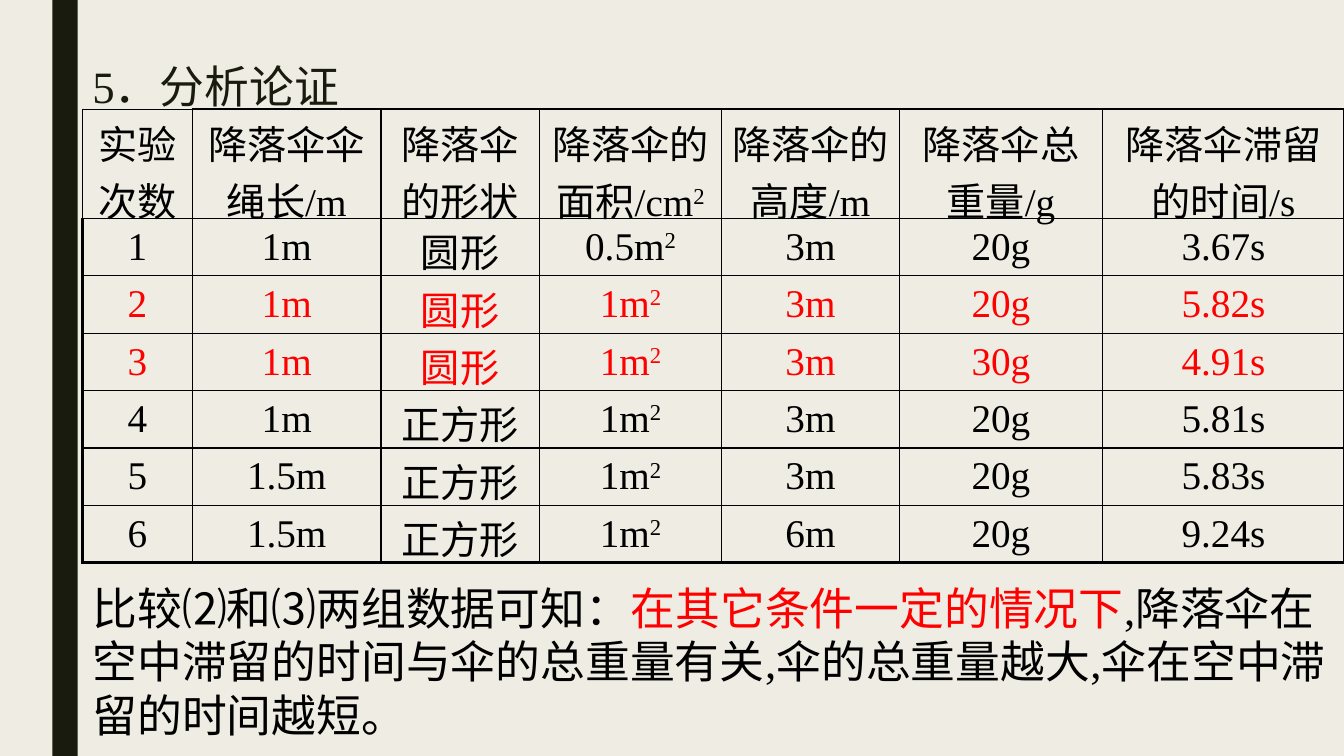
import pptx
import pptx.dml.color
import pptx.enum.shapes
import pptx.enum.text
import pptx.oxml.ns
import pptx.util
from lxml import etree

Cm, Pt = pptx.util.Cm, pptx.util.Pt
COLORS = {"page": "EFEDE3", "bar": "191B0E", "ink": "000000", "key": "FF0000"}
FONT = "Times New Roman"
TITLE = "5．分析论证"
HEADERS = ["实验次数", "降落伞伞绳长/m", "降落伞的形状", "降落伞的面积/cm²",
           "降落伞的高度/m", "降落伞总重量/g", "降落伞滞留的时间/s"]
TRIALS = [
    ("1", "1m", "圆形", "0.5m²", "3m", "20g", "3.67s"),
    ("2", "1m", "圆形", "1m²", "3m", "20g", "5.82s"),
    ("3", "1m", "圆形", "1m²", "3m", "30g", "4.91s"),
    ("4", "1m", "正方形", "1m²", "3m", "20g", "5.81s"),
    ("5", "1.5m", "正方形", "1m²", "3m", "20g", "5.83s"),
    ("6", "1.5m", "正方形", "1m²", "6m", "20g", "9.24s"),
]
COMPARED = ("2", "3")
CONCLUSION = [
    ("比较⑵和⑶两组数据可知：", "ink"),
    ("在其它条件一定的情况下", "key"),
    (",降落伞在空中滞留的时间与伞的总重量有关,伞的总重量越大,伞在空中滞留的时间越短。", "ink"),
]
COLUMN_WIDTHS = [2.77, 4.75, 3.99, 4.6, 4.47, 5.13, 6.09]
HEADER_HEIGHT, TRIAL_HEIGHT = 2.75, 1.44
LEFT, TABLE_TOP = 2.08, 2.75
THIN, THICK = 1, 2.25


def rgb(name):
    """Return the named colour."""
    return pptx.dml.color.RGBColor.from_string(COLORS[name])


def add_child(parent, tag, **attributes):
    """Append a drawing element to a parent."""
    return etree.SubElement(parent, pptx.oxml.ns.qn(tag), attributes)


def write_spans(para, spans, size):
    """Fill a paragraph with coloured spans."""
    para.font.name, para.font.size = FONT, Pt(size)
    for text, color in spans:
        span = para.add_run()
        span.text = text
        span.font.color.rgb = rgb(color)
    return para


def add_text(page, left, top, width, height, spans):
    """Add a wrapped text box and return its paragraph."""
    box = page.shapes.add_textbox(Cm(left), Cm(top), Cm(width), Cm(height))
    box.text_frame.word_wrap = True
    return write_spans(box.text_frame.paragraphs[0], spans, 32)


def set_borders(cell, widths):
    """Draw the four cell edges."""
    properties = cell._tc.get_or_add_tcPr()
    for position, (side, width) in enumerate(widths.items()):
        line = etree.Element(pptx.oxml.ns.qn("a:ln" + side), {"w": str(Pt(width))})
        fill = add_child(line, "a:solidFill")
        add_child(fill, "a:srgbClr", val=COLORS["ink"])
        properties.insert(position, line)


def fill_cell(cell, text, color, padding):
    """Write centred text, raising a squared unit."""
    cell.fill.background()
    cell.vertical_anchor = pptx.enum.text.MSO_ANCHOR.MIDDLE
    cell.margin_left = cell.margin_right = Cm(0.25)
    cell.margin_top = cell.margin_bottom = Cm(padding)
    para = cell.text_frame.paragraphs[0]
    para.alignment = pptx.enum.text.PP_ALIGN.CENTER
    before = add_child(para._p.get_or_add_pPr(), "a:spcBef")
    add_child(before, "a:spcPct", val="20000")
    spans = [(text.rstrip("²"), color)]
    if text.endswith("²"):
        spans.append(("2", color))
    write_spans(para, spans, 28)
    for span in para.runs[1:]:
        span.font._element.set("baseline", "30000")


def add_trial_table(page):
    """Add the table of parachute trials."""
    rows = [HEADERS, *TRIALS]
    last_row, last_column = len(rows) - 1, len(HEADERS) - 1
    height = HEADER_HEIGHT + TRIAL_HEIGHT * len(TRIALS)
    table = page.shapes.add_table(len(rows), len(HEADERS), Cm(LEFT), Cm(TABLE_TOP),
                                  Cm(sum(COLUMN_WIDTHS)), Cm(height)).table
    table.first_row = table.horz_banding = False
    for column, width in zip(table.columns, COLUMN_WIDTHS):
        column.width = Cm(width)
    for r, texts in enumerate(rows):
        table.rows[r].height = Cm(TRIAL_HEIGHT if r else HEADER_HEIGHT)
        color = "key" if texts[0] in COMPARED else "ink"
        for c, text in enumerate(texts):
            cell = table.cell(r, c)
            fill_cell(cell, text, color, 0.1 if r and c else 0.13)
            set_borders(cell, {
                "L": THICK if r and c == 0 else THIN,
                "R": THICK if c == last_column else THIN,
                "T": THICK if c and r == 0 else THIN,
                "B": THICK if r == last_row else THIN,
            })


def main():
    """Build the slide and save it."""
    deck = pptx.Presentation()
    deck.slide_width, deck.slide_height = Cm(33.87), Cm(19.05)
    page = deck.slides.add_slide(deck.slide_layouts[6])
    page.background.fill.solid()
    page.background.fill.fore_color.rgb = rgb("page")
    bar = page.shapes.add_shape(pptx.enum.shapes.MSO_SHAPE.RECTANGLE,
                                Cm(1.32), 0, Cm(0.64), deck.slide_height)
    bar.shadow.inherit = False
    bar.fill.solid()
    bar.fill.fore_color.rgb = rgb("bar")
    bar.line.fill.background()
    title = add_text(page, LEFT, 0, 7.32, TABLE_TOP, [(TITLE, "bar")])
    title.line_spacing = 2.0
    add_text(page, LEFT, 14.5, sum(COLUMN_WIDTHS), 4.37, CONCLUSION)
    add_trial_table(page)
    deck.save("out.pptx")


if __name__ == "__main__":
    main()
